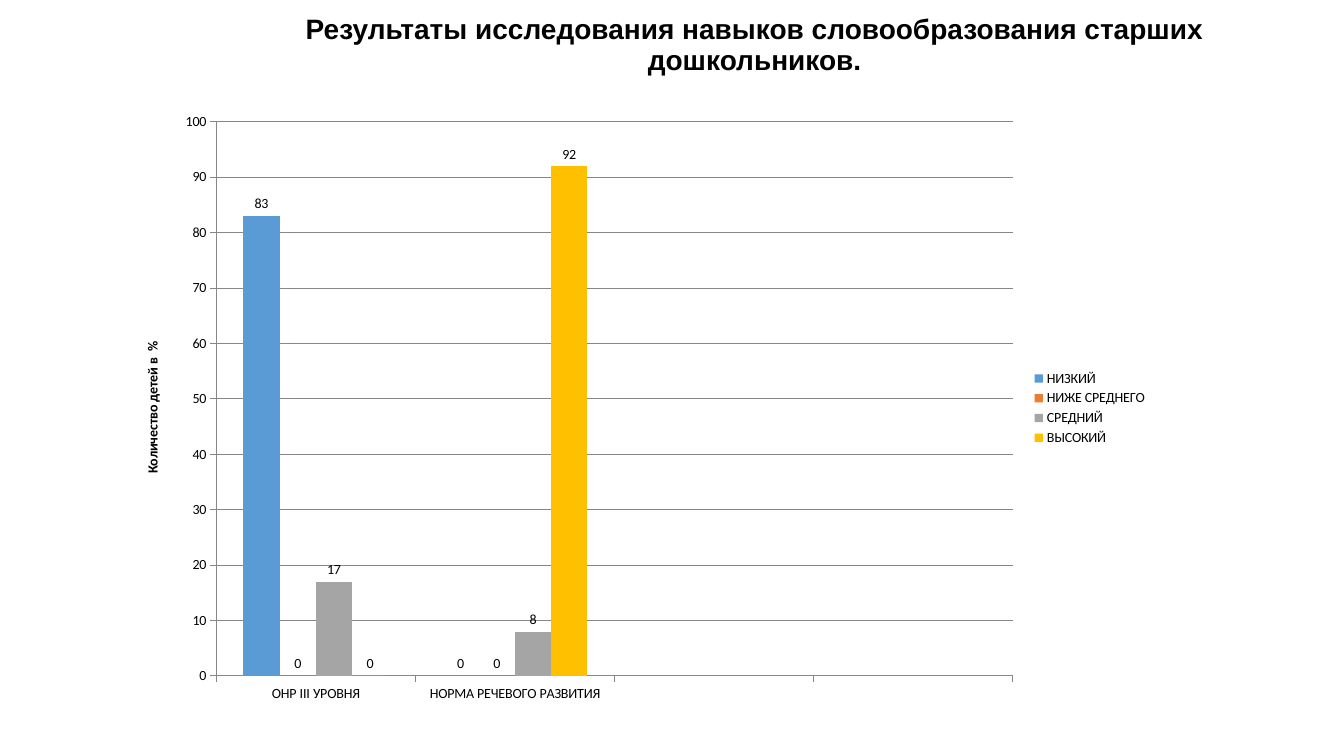
import pptx
import pptx.chart.data
import pptx.dml.color
import pptx.enum.chart
import pptx.enum.text
import pptx.oxml
import pptx.oxml.ns
import pptx.util
from dataclasses import dataclass

Pt = pptx.util.Pt
RGB = pptx.dml.color.RGBColor.from_string


@dataclass(frozen=True)
class Theme:
    text: str = "000000"
    grid: str = "878787"
    title_font: str = "Arial"
    chart_font: str = "Calibri"
    title_size: int = 20
    chart_size: int = 10


THEME = Theme()

TITLE = "Результаты исследования навыков словообразования старших дошкольников."
AXIS_TITLE = "Количество детей в  %"
# The last two groups are left empty
GROUPS = ["ОНР III УРОВНЯ", "НОРМА РЕЧЕВОГО РАЗВИТИЯ", "", ""]
LEVELS = [
    ("НИЗКИЙ", (83, 0, None, None), "5B9BD5"),
    ("НИЖЕ СРЕДНЕГО", (0, 0, None, None), "ED7D31"),
    ("СРЕДНИЙ", (17, 8, None, None), "A5A5A5"),
    ("ВЫСОКИЙ", (0, 92, None, None), "FFC000"),
]
PLOT_AREA = {"x": 0.09, "y": 0.03, "w": 0.77, "h": 0.91}


def apply(target, values):
    for name, value in values.items():
        setattr(target, name, value)


def style_font(font, name, size, bold):
    apply(font, {"name": name, "size": Pt(size), "bold": bold})
    font.color.rgb = RGB(THEME.text)


def place_plot(chart, fractions):
    """Fix the inner plot area as fractions of the chart box."""
    plot_area = chart._chartSpace.chart.plotArea
    for old in plot_area.findall(pptx.oxml.ns.qn("c:layout")):
        plot_area.remove(old)
    modes = '<c:layoutTarget val="inner"/><c:xMode val="edge"/><c:yMode val="edge"/>'
    sizes = "".join(f'<c:{key} val="{value}"/>' for key, value in fractions.items())
    plot_area.insert(0, pptx.oxml.parse_xml(
        f'<c:layout {pptx.oxml.ns.nsdecls("c")}><c:manualLayout>'
        f'{modes}{sizes}</c:manualLayout></c:layout>'))


def add_title(page, left, top, width, height):
    title = page.shapes.title
    apply(title, {"left": Pt(left), "top": Pt(top),
                  "width": Pt(width), "height": Pt(height)})
    # The deeper bottom margin lifts the text by half a line
    apply(title.text_frame, {
        "word_wrap": True,
        "auto_size": pptx.enum.text.MSO_AUTO_SIZE.NONE,
        "vertical_anchor": pptx.enum.text.MSO_ANCHOR.MIDDLE,
        "margin_bottom": Pt(25),
    })
    para = title.text_frame.paragraphs[0]
    apply(para, {"alignment": pptx.enum.text.PP_ALIGN.CENTER, "line_spacing": 0.9})
    span = para.add_run()
    span.text = TITLE
    style_font(span.font, THEME.title_font, THEME.title_size, True)


def add_level_chart(page, left, top, width, height):
    data = pptx.chart.data.CategoryChartData()
    data.categories = GROUPS
    for name, values, _ in LEVELS:
        data.add_series(name, values)
    chart = page.shapes.add_chart(
        pptx.enum.chart.XL_CHART_TYPE.COLUMN_CLUSTERED,
        Pt(left), Pt(top), Pt(width), Pt(height), data).chart
    chart.has_title = False
    style_font(chart.font, THEME.chart_font, THEME.chart_size, False)
    place_plot(chart, PLOT_AREA)

    # Columns and their values
    plot = chart.plots[0]
    apply(plot, {"gap_width": 150, "overlap": 0, "vary_by_categories": False})
    for series, (_, _, color) in zip(plot.series, LEVELS):
        series.format.fill.solid()
        series.format.fill.fore_color.rgb = RGB(color)
        apply(series.data_labels, {
            "show_value": True,
            "position": pptx.enum.chart.XL_LABEL_POSITION.OUTSIDE_END,
        })

    # Axes and gridlines
    percent = chart.value_axis
    apply(percent, {"minimum_scale": 0, "maximum_scale": 100, "major_unit": 10,
                    "has_major_gridlines": True})
    for axis in (percent, chart.category_axis):
        apply(axis, {"major_tick_mark": pptx.enum.chart.XL_TICK_MARK.OUTSIDE,
                     "minor_tick_mark": pptx.enum.chart.XL_TICK_MARK.NONE})
    for part in (percent, chart.category_axis, percent.major_gridlines):
        part.format.line.color.rgb = RGB(THEME.grid)
        part.format.line.width = Pt(0.75)
    para = percent.axis_title.text_frame.paragraphs[0]
    span = para.add_run()
    span.text = AXIS_TITLE
    style_font(span.font, THEME.chart_font, THEME.chart_size, True)

    # Legend
    chart.has_legend = True
    apply(chart.legend, {
        "position": pptx.enum.chart.XL_LEGEND_POSITION.RIGHT,
        "include_in_layout": False,
    })


def main():
    deck = pptx.Presentation()
    apply(deck, {"slide_width": Pt(960), "slide_height": Pt(540)})
    page = deck.slides.add_slide(deck.slide_layouts.get_by_name("Title Only"))
    add_title(page, 188, -4, 702, 95)
    add_level_chart(page, 88, 74, 739, 435)
    deck.save("out.pptx")


if __name__ == "__main__":
    main()
